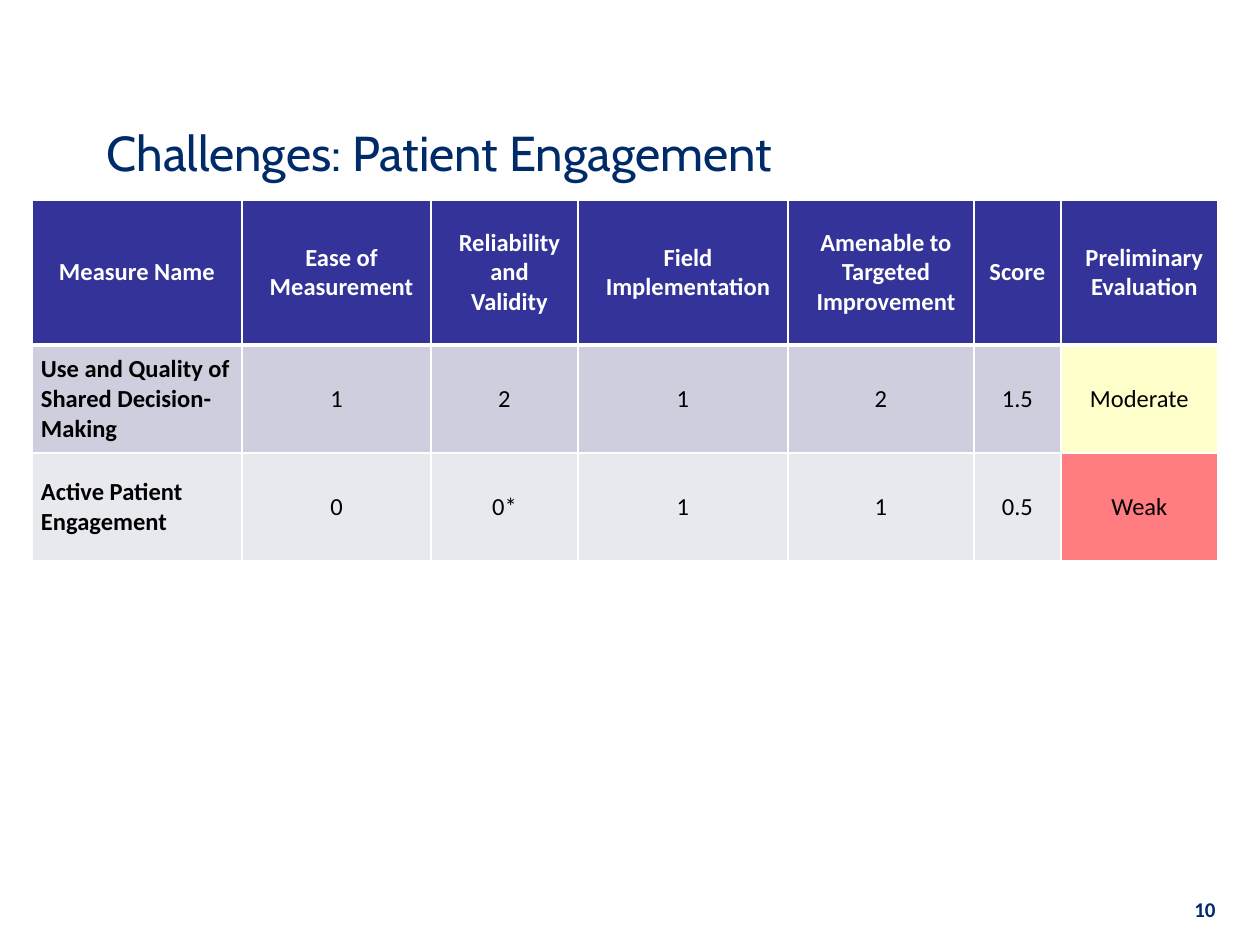
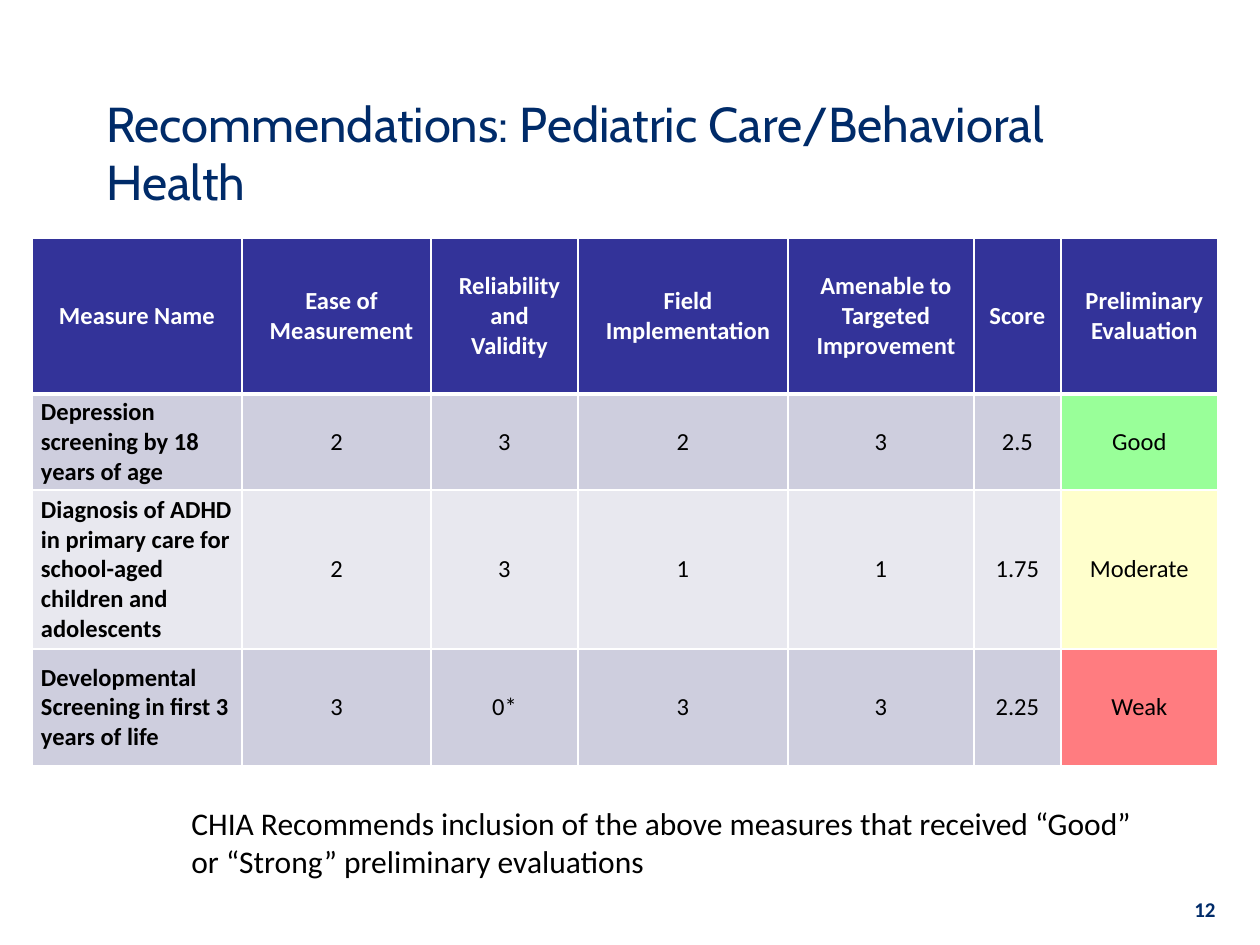
from dataclasses import dataclass
from lxml.etree import SubElement
from pptx import Presentation
from pptx.dml.color import RGBColor
from pptx.enum.text import MSO_ANCHOR as ANCHOR, PP_ALIGN as ALIGN
from pptx.oxml.ns import qn
from pptx.util import Pt

HEADERS = [
    "Measure Name", "Ease of Measurement", "Reliability and Validity",
    "Field Implementation", "Amenable to Targeted Improvement", "Score",
    "Preliminary Evaluation",
]
INDENTED = {1, 2, 3, 4, 6}

SLIDES = [
    dict(
        number="10", title="Challenges: Patient Engagement",
        top=200, heights=[145, 108, 108],
        measures=[
            ("Use and Quality of Shared Decision-Making",
             "1", "2", "1", "2", "1.5", "Moderate"),
            ("Active Patient Engagement", "0", "0*", "1", "1", "0.5", "Weak"),
        ],
    ),
    dict(
        number="12", title="Recommendations: Pediatric Care/Behavioral Health",
        top=238, heights=[156, 96, 159, 117],
        measures=[
            ("Depression screening by 18 years of age",
             "2", "3", "2", "3", "2.5", "Good"),
            ("Diagnosis of ADHD in primary care for school-aged children and adolescents",
             "2", "3", "1", "1", "1.75", "Moderate"),
            ("Developmental Screening in first 3 years of life",
             "3", "0*", "3", "3", "2.25", "Weak"),
        ],
        note="CHIA Recommends inclusion of the above measures that received "
             "“Good” or “Strong” preliminary evaluations",
    ),
]


@dataclass(frozen=True)
class Theme:
    navy: str = "002B69"
    header: str = "333399"
    white: str = "FFFFFF"
    black: str = "000000"
    bands: tuple = ("CECEDE", "E8E8EF")
    title_font: str = "Cabin"
    body_font: str = "Calibri"
    title_size: int = 28
    note_size: int = 18
    cell_size: int = 14
    number_size: int = 12


T = Theme()
RATINGS = {"Good": "99FF99", "Moderate": "FFFFCC", "Weak": "FF7C80"}
SLIDE_W, SLIDE_H = 1260, 945
TITLE_BOX = (94, 84, 1071, 136)
NUMBER_BOX = (966, 892, 262, 34)
NOTE_BOX = (179, 798, 987, 89)
TABLE_LEFT = 32
COL_WIDTHS = [210, 189, 147, 210, 186, 87, 157]
CELL_PAD, HEADER_INDENT = 9, 10
THIN, THICK = 1, 3


def px(n):
    return round(n * 914400 / 126)


def write(p, text, size, color, font=T.body_font, bold=False, align=ALIGN.LEFT):
    p.alignment = align
    r = p.add_run()
    r.text = text
    for name, value in dict(name=font, size=Pt(size), bold=bold).items():
        setattr(r.font, name, value)
    r.font.color.rgb = RGBColor.from_string(color)


def add_text(s, box, text, size, color, anchor=ANCHOR.MIDDLE, **style):
    tf = s.shapes.add_textbox(*map(px, box)).text_frame
    tf.word_wrap = True
    tf.vertical_anchor = anchor
    write(tf.paragraphs[0], text, size, color, **style)


def add_borders(cell, widths):
    tc_pr = cell._tc.get_or_add_tcPr()
    for side, width in widths.items():
        ln = SubElement(tc_pr, qn(f"a:ln{side}"), w=str(Pt(width)))
        fill = SubElement(ln, qn("a:solidFill"))
        SubElement(fill, qn("a:srgbClr"), val=T.white)


def fill_cell(cell, text, row, col):
    header = row == 0
    add_borders(cell, dict(L=THIN, R=THIN, T=THICK if row == 1 else THIN,
                           B=THICK if header else THIN))
    band = T.header if header else T.bands[(row - 1) % 2]
    cell.fill.solid()
    cell.fill.fore_color.rgb = RGBColor.from_string(RATINGS.get(text, band))
    layout = dict(margin_left=px(CELL_PAD), margin_right=px(CELL_PAD),
                  margin_top=0, margin_bottom=0, vertical_anchor=ANCHOR.MIDDLE)
    for name, value in layout.items():
        setattr(cell, name, value)
    p = cell.text_frame.paragraphs[0]
    if header and col in INDENTED:
        p._p.get_or_add_pPr().set("marL", str(px(HEADER_INDENT)))
    write(p, text, T.cell_size, T.white if header else T.black,
          bold=header or col == 0,
          align=ALIGN.CENTER if header or col else ALIGN.LEFT)


def add_measures(s, top, heights, measures):
    rows = [HEADERS, *measures]
    box = (TABLE_LEFT, top, sum(COL_WIDTHS), sum(heights))
    table = s.shapes.add_table(len(rows), len(HEADERS), *map(px, box)).table
    table.first_row = table.horz_banding = False
    for column, width in zip(table.columns, COL_WIDTHS):
        column.width = px(width)
    for i, (texts, height) in enumerate(zip(rows, heights)):
        table.rows[i].height = px(height)
        for j, text in enumerate(texts):
            fill_cell(table.cell(i, j), text, i, j)


def add_slide(prs, number, title, top, heights, measures, note=None):
    s = prs.slides.add_slide(prs.slide_layouts[6])
    add_text(s, NUMBER_BOX, number, T.number_size, T.navy, bold=True, align=ALIGN.RIGHT)
    add_text(s, TITLE_BOX, title, T.title_size, T.navy, font=T.title_font)
    add_measures(s, top, heights, measures)
    if note:
        add_text(s, NOTE_BOX, note, T.note_size, T.black, anchor=ANCHOR.TOP)


def main():
    prs = Presentation()
    prs.slide_width, prs.slide_height = px(SLIDE_W), px(SLIDE_H)
    for content in SLIDES:
        add_slide(prs, **content)
    prs.save("out.pptx")


if __name__ == "__main__":
    main()
